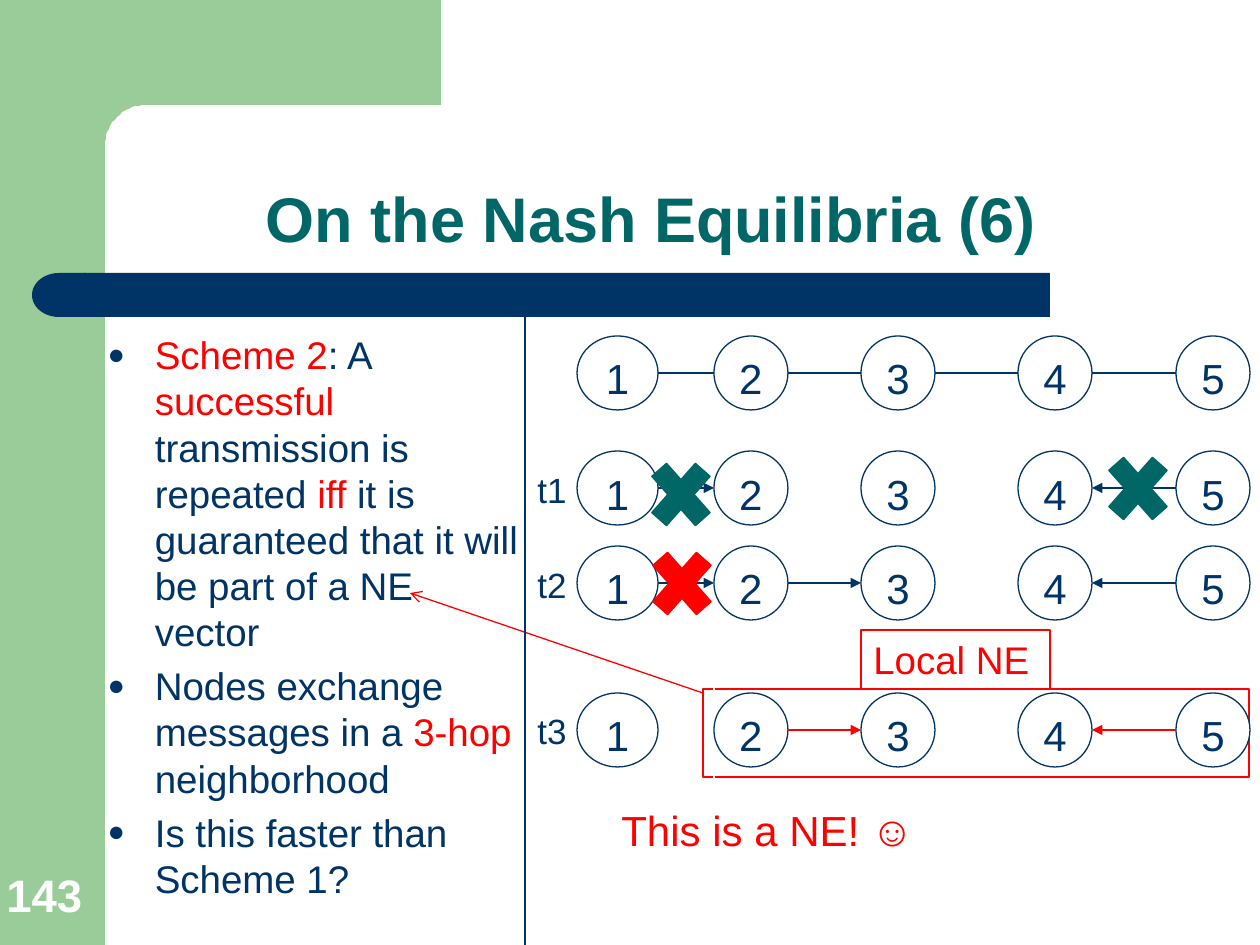
import math

import pptx
import pptx.dml.color
import pptx.enum.shapes
import pptx.enum.text
import pptx.oxml
import pptx.oxml.ns
import pptx.util

RGB = pptx.dml.color.RGBColor
NAVY = RGB(0x00, 0x33, 0x66)
TEAL = RGB(0x00, 0x66, 0x66)
GREEN = RGB(0x99, 0xCC, 0x99)
RED = RGB(0xFF, 0x00, 0x00)
WHITE = RGB(0xFF, 0xFF, 0xFF)

SHAPE = pptx.enum.shapes.MSO_SHAPE
ALIGN = pptx.enum.text.PP_ALIGN
ANCHOR = pptx.enum.text.MSO_ANCHOR
PX = 914400 / 126  # EMU in one px
qn = pptx.oxml.ns.qn

prs = pptx.Presentation()
prs.slide_width, prs.slide_height = round(1260 * PX), round(945 * PX)
s = prs.slides.add_slide(prs.slide_layouts[1])
title, body = s.shapes.title, s.placeholders[1]


def put(kind, box, fill=None, line=None, text=None, size=24, color=NAVY,
        bold=False, align=ALIGN.LEFT, anchor=ANCHOR.TOP, wrap=True):
    """Add a preset shape, or a text box when kind is None."""
    x, y, w, h = [round(v * PX) for v in box]
    if kind is None:
        sp = s.shapes.add_textbox(x, y, w, h)
    else:
        sp = s.shapes.add_shape(kind, x, y, w, h)
        sp.shadow.inherit = False
        if fill is None:
            sp.fill.background()
        else:
            sp.fill.solid()
            sp.fill.fore_color.rgb = fill
        if line is None:
            sp.line.fill.background()
        else:
            sp.line.color.rgb = line
            sp.line.width = pptx.util.Pt(0.75)
    if text:
        tf = sp.text_frame
        tf.word_wrap, tf.vertical_anchor = wrap, anchor
        p = tf.paragraphs[0]
        p.alignment = align
        r = p.add_run()
        r.text = text
        r.font.name, r.font.size = "Arial", pptx.util.Pt(size)
        r.font.bold, r.font.color.rgb = bold, color
    return sp


def connect(x1, y1, x2, y2, color=NAVY, width=0.75, arrow=None):
    """Draw a straight line, with an arrowhead at its end if one is named."""
    c = s.shapes.add_connector(pptx.enum.shapes.MSO_CONNECTOR.STRAIGHT,
                               *[round(v * PX) for v in (x1, y1, x2, y2)])
    c.line.color.rgb, c.line.width = color, pptx.util.Pt(width)
    if arrow:
        c.line._get_or_add_ln().append(
            pptx.oxml.parse_xml(
                '<a:tailEnd xmlns:a="http://schemas.openxmlformats.org/drawingml/2006/main"'
                f' type="{arrow}"/>'))
    c._element.spPr.append(c._element.makeelement(qn("a:effectLst"), {}))


# Green side band and rounded corner
put(SHAPE.RECTANGLE, (0, 0, 105, 945), GREEN)
arc = [(146 - 41 * math.sin(math.radians(a)), 146 - 41 * math.cos(math.radians(a)))
       for a in range(0, 91, 5)]
fb = s.shapes.build_freeform(63, 0, scale=PX)
fb.add_line_segments([(441, 0), (441, 105)] + arc + [(105, 161), (63, 161)])
sp = fb.convert_to_shape()
sp.shadow.inherit = False
sp.fill.solid()
sp.fill.fore_color.rgb = GREEN
sp.line.fill.background()

# Navy bar with a rounded left end
put(SHAPE.RECTANGLE, (84, 273, 966, 44), NAVY)
sp = put(SHAPE.FLOWCHART_DELAY, (32, 273, 54, 44), NAVY)
sp._element.spPr.find(qn("a:xfrm")).set("flipH", "1")

# Box round the local equilibrium
put(SHAPE.RECTANGLE, (703, 689, 546, 88), WHITE, RED)

# Title and body go in front of the decoration
for ph, box in ((title, (105, 105, 1092, 157)), (body, (95, 325, 437, 602))):
    ph.left, ph.top, ph.width, ph.height = [round(v * PX) for v in box]
    ph.text_frame.auto_size = pptx.enum.text.MSO_AUTO_SIZE.NONE
    s.shapes._spTree.append(ph._element)

tf = title.text_frame
tf.vertical_anchor = ANCHOR.BOTTOM
p = tf.paragraphs[0]
p.alignment, p.line_spacing = ALIGN.CENTER, 0.9
r = p.add_run()
r.text = "On the Nash Equilibria (6)"
r.font.name, r.font.size = "Arial", pptx.util.Pt(36)
r.font.bold, r.font.color.rgb = True, TEAL

# Bullets: runs alternate with their colours
bullets = [
    [("Scheme 2", RED), (": A ", NAVY), ("successful", RED),
     (" transmission is repeated ", NAVY), ("iff", RED),
     (" it is guaranteed that it will be part of a NE vector", NAVY)],
    [("Nodes exchange messages in a ", NAVY), ("3-hop", RED), (" neighborhood", NAVY)],
    [("Is this faster than Scheme 1?", NAVY)],
]
tf = body.text_frame
for i, runs in enumerate(bullets):
    p = tf.paragraphs[0] if i == 0 else tf.add_paragraph()
    pPr = p._p.get_or_add_pPr()
    pPr.set("marL", "342900")
    pPr.set("indent", "-342900")
    clr = pPr.makeelement(qn("a:buClr"), {})
    clr.append(clr.makeelement(qn("a:srgbClr"), {"val": str(NAVY)}))
    pPr.append(clr)
    pPr.append(pPr.makeelement(qn("a:buSzPct"), {"val": "75000"}))
    pPr.append(pPr.makeelement(qn("a:buFont"), {"typeface": "Arial"}))
    pPr.append(pPr.makeelement(qn("a:buChar"), {"char": "●"}))
    for text, color in runs:
        r = p.add_run()
        r.text = text
        r.font.name, r.font.size = "Arial", pptx.util.Pt(22)
        r.font.color.rgb = color

# Slide number
put(None, (-6, 861, 115, 67), text="143", size=26, color=WHITE, bold=True,
    anchor=ANCHOR.BOTTOM)

# Inner frame behind the last row of nodes
put(SHAPE.RECTANGLE, (714, 683, 546, 115), line=WHITE)

# Rows of nodes: top, label, label top, link colour, (from, to) links
node_x = [577, 714, 861, 1018, 1176]
node_w = [81, 74, 74, 74, 74]
rows = [
    (336, None, 0, NAVY, [(1, 2), (2, 3), (3, 4), (4, 5)]),
    (451, "t1", 462, NAVY, [(1, 2), (5, 4)]),
    (546, "t2", 557, NAVY, [(1, 2), (2, 3), (5, 4)]),
    (693, "t3", 703, RED, [(2, 3), (5, 4)]),
]
for top, label, label_top, color, links in rows:
    for i, (x, w) in enumerate(zip(node_x, node_w)):
        put(SHAPE.OVAL, (x, top, w, 74), WHITE, NAVY, str(i + 1),
            align=ALIGN.CENTER, wrap=False)
    for a, b in links:
        left = min(a, b) - 1
        ends = [node_x[left] + node_w[left], node_x[left + 1]]
        if a > b:
            ends.reverse()
        connect(ends[0], top + 37, ends[1], top + 37, color,
                arrow="triangle" if label else None)
    if label:
        put(None, (525, label_top, 73, 55), text=label, size=20)

# Crosses on the failed transmissions
for x, y, color in ((639, 447, TEAL), (1096, 441, TEAL), (640, 536, RED)):
    put(SHAPE.MATH_MULTIPLY, (x, y, 84, 95), color, color)

# Captions, pointer and divider
put(None, (609, 798, 640, 64), text="This is a NE! ☺", color=RED)
connect(703, 693, 410, 593, RED, arrow="arrow")
connect(525, 315, 525, 945, width=1.5)
put(SHAPE.RECTANGLE, (861, 630, 189, 59), line=RED, text="Local NE", size=22, color=RED)

prs.save("out.pptx")
